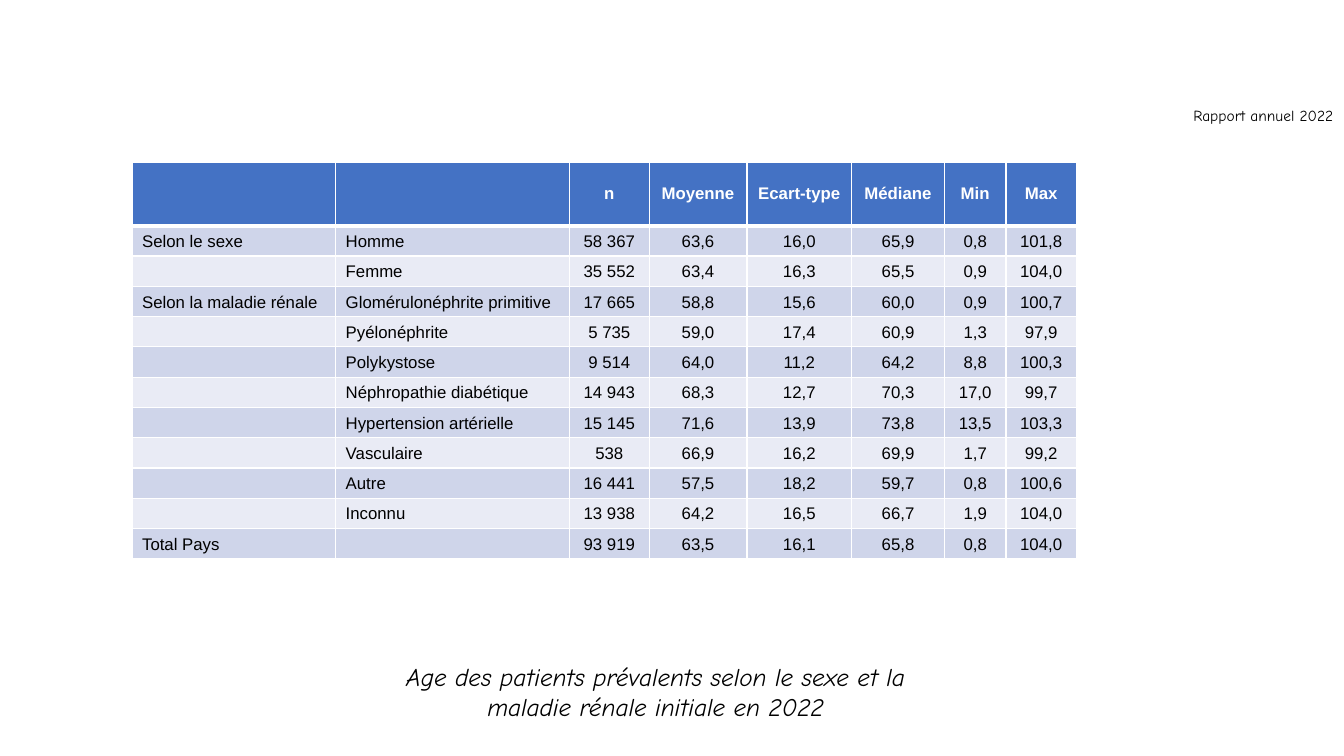
from dataclasses import dataclass

from lxml.etree import SubElement
from pptx import Presentation
from pptx.dml.color import RGBColor
from pptx.enum.text import MSO_ANCHOR as Anchor, MSO_AUTO_SIZE as AutoSize, PP_ALIGN as Align
from pptx.oxml.ns import qn
from pptx.util import Inches, Pt

# Slide grid: 40 columns by 30 rows
SLIDE_WIDTH, SLIDE_HEIGHT = Inches(13.33), Inches(7.5)
GRID_COLUMNS, GRID_ROWS = 40, 30


@dataclass(frozen=True)
class Theme:
    text: str = "000000"
    white: str = "FFFFFF"
    header: str = "4472C4"
    bands: tuple = ("CFD5EA", "E9EBF5")
    table_font: str = "Arial"
    note_font: str = "Comic Neue"
    table_size: int = 12
    label_size: int = 11
    caption_size: int = 18
    thin: int = 1
    thick: int = 3


THEME = Theme()

LABEL_COLUMNS = 2
COLUMN_SPANS = (6.06, 6.96, 2.37, 2.91, 3.12, 2.76, 1.83, 2.1)
HEADER_SPAN, BODY_SPAN = 2.52, 1.2
AGE_TABLE = (
    ("", "", "n", "Moyenne", "Ecart-type", "Médiane", "Min", "Max"),
    ("Selon le sexe", "Homme", "58 367", "63,6", "16,0", "65,9", "0,8", "101,8"),
    ("", "Femme", "35 552", "63,4", "16,3", "65,5", "0,9", "104,0"),
    ("Selon la maladie rénale", "Glomérulonéphrite primitive",
     "17 665", "58,8", "15,6", "60,0", "0,9", "100,7"),
    ("", "Pyélonéphrite", "5 735", "59,0", "17,4", "60,9", "1,3", "97,9"),
    ("", "Polykystose", "9 514", "64,0", "11,2", "64,2", "8,8", "100,3"),
    ("", "Néphropathie diabétique", "14 943", "68,3", "12,7", "70,3", "17,0", "99,7"),
    ("", "Hypertension artérielle", "15 145", "71,6", "13,9", "73,8", "13,5", "103,3"),
    ("", "Vasculaire", "538", "66,9", "16,2", "69,9", "1,7", "99,2"),
    ("", "Autre", "16 441", "57,5", "18,2", "59,7", "0,8", "100,6"),
    ("", "Inconnu", "13 938", "64,2", "16,5", "66,7", "1,9", "104,0"),
    ("Total Pays", "", "93 919", "63,5", "16,1", "65,8", "0,8", "104,0"),
)


def across(columns):
    return round(SLIDE_WIDTH * columns / GRID_COLUMNS)


def down(rows):
    return round(SLIDE_HEIGHT * rows / GRID_ROWS)


def area(left, top, width, height):
    return across(left), down(top), across(width), down(height)


def write(text_frame, text, font, size, color, align=Align.LEFT, bold=False, italic=False):
    text_frame.text = text
    paragraph = text_frame.paragraphs[0]
    paragraph.alignment = align
    for run in paragraph.runs:
        run.font.name, run.font.size = font, Pt(size)
        run.font.bold, run.font.italic = bold, italic
        run.font.color.rgb = RGBColor.from_string(color)
    if not text:  # an empty cell needs its size so that its row stays low
        SubElement(paragraph._p, qn("a:endParaRPr"), sz=str(size * 100))


def add_label(slide, text, *place):
    text_frame = slide.shapes.add_textbox(*area(*place)).text_frame
    text_frame.word_wrap = False
    text_frame.auto_size = AutoSize.SHAPE_TO_FIT_TEXT
    write(text_frame, text, THEME.note_font, THEME.label_size, THEME.text)


def set_caption(slide, text, *place):
    title = slide.shapes.title
    title.left, title.top, title.width, title.height = area(*place)
    text_frame = title.text_frame
    text_frame.word_wrap = True
    text_frame.auto_size = AutoSize.NONE
    text_frame.vertical_anchor = Anchor.TOP
    write(text_frame, text, THEME.note_font, THEME.caption_size, THEME.text,
          Align.CENTER, italic=True)


def set_borders(cell, top, bottom):
    properties = cell._tc.get_or_add_tcPr()
    widths = {"a:lnL": THEME.thin, "a:lnR": THEME.thin, "a:lnT": top, "a:lnB": bottom}
    for position, (tag, width) in enumerate(widths.items()):
        line = properties.makeelement(qn(tag), {"w": str(Pt(width))})
        fill = SubElement(line, qn("a:solidFill"))
        SubElement(fill, qn("a:srgbClr"), val=THEME.white)
        properties.insert(position, line)


def format_cell(cell, text, row, column):
    is_header = row == 0
    fill = THEME.header if is_header else THEME.bands[(row - 1) % 2]
    cell.fill.solid()
    cell.fill.fore_color.rgb = RGBColor.from_string(fill)
    cell.vertical_anchor = Anchor.MIDDLE if is_header else Anchor.BOTTOM
    write(cell.text_frame, text, THEME.table_font, THEME.table_size,
          THEME.white if is_header else THEME.text,
          Align.LEFT if column < LABEL_COLUMNS else Align.CENTER, bold=is_header)
    set_borders(cell, top=THEME.thick if row == 1 else THEME.thin,
                bottom=THEME.thick if is_header else THEME.thin)


def add_age_table(slide, left, top):
    row_spans = [HEADER_SPAN] + [BODY_SPAN] * (len(AGE_TABLE) - 1)
    place = area(left, top, sum(COLUMN_SPANS), sum(row_spans))
    table = slide.shapes.add_table(len(row_spans), len(COLUMN_SPANS), *place).table
    for column, span in zip(table.columns, COLUMN_SPANS):
        column.width = across(span)
    for row, span in zip(table.rows, row_spans):
        row.height = down(span)
    for row, texts in enumerate(AGE_TABLE):
        for column, text in enumerate(texts):
            format_cell(table.cell(row, column), text, row, column)


def main():
    presentation = Presentation()
    presentation.slide_width, presentation.slide_height = SLIDE_WIDTH, SLIDE_HEIGHT
    slide = presentation.slides.add_slide(presentation.slide_layouts.get_by_name("Title Only"))

    # Report label, caption and table of ages
    add_label(slide, "Rapport annuel 2022", 35.22, 4, 5.07, 1.16)
    set_caption(slide, "Age des patients prévalents selon le sexe et la maladie rénale "
                "initiale en 2022", 11.49, 26.04, 16.05, 2)
    add_age_table(slide, 3.93, 6.44)

    presentation.save("out.pptx")


if __name__ == "__main__":
    main()
